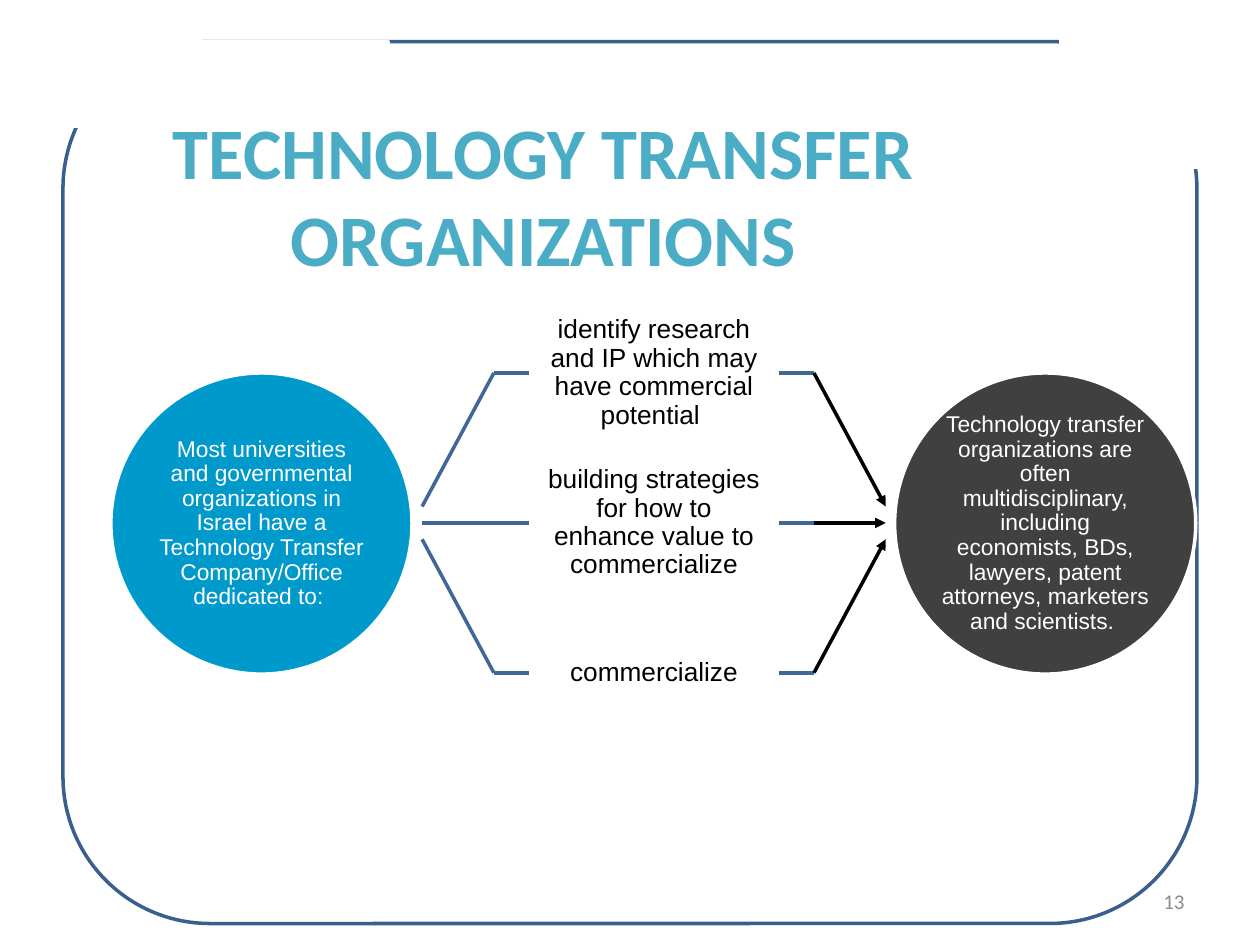
from lxml.etree import SubElement
from pptx import Presentation
from pptx.dml.color import RGBColor
from pptx.enum.shapes import MSO_CONNECTOR, MSO_SHAPE
from pptx.enum.text import MSO_ANCHOR, MSO_AUTO_SIZE, PP_ALIGN
from pptx.oxml.ns import qn
from pptx.util import Inches, Pt

COLORS = {
    "white": "FFFFFF", "black": "000000", "frame": "3A5F8C", "link": "3F6797",
    "title": "4BACC6", "source": "0099CC", "team": "404040", "number": "8C8C8C",
}
LEFT, RIGHT = 1, 3  # connection sites of a rectangle


def color(name):
    return RGBColor.from_string(COLORS[name])


class SlideBuilder:
    line_width = Pt(2)

    def __init__(self, page):
        self.page = page
        self.shapes = page.shapes

    def set_text(self, shape, text, size, fill, font="Arial", align=PP_ALIGN.CENTER,
                 inset=0.0, spacing=None, bold=False):
        frame = shape.text_frame
        frame.word_wrap = True
        frame.auto_size = MSO_AUTO_SIZE.NONE
        frame.vertical_anchor = MSO_ANCHOR.MIDDLE
        frame.margin_left = frame.margin_right = Inches(inset)
        frame.margin_top = frame.margin_bottom = Inches(inset)
        para = frame.paragraphs[0]
        para.alignment = align
        if spacing:
            para.line_spacing = spacing
        span = para.add_run()
        span.text = text
        span.font.name = font
        span.font.size = Pt(size)
        span.font.bold = bold
        span.font.color.rgb = color(fill)

    def title(self, text, box):
        title = self.shapes.title
        title.left, title.top, title.width, title.height = map(Inches, box)
        self.set_text(title, text, 41.4, "title", font="Calibri", inset=0.1, bold=True)
        title.element.getparent().append(title.element)  # above the frame

    def shape(self, kind, box, fill=None, line="white"):
        shape = self.shapes.add_shape(kind, *map(Inches, box))
        shape.shadow.inherit = False
        if fill:
            shape.fill.solid()
            shape.fill.fore_color.rgb = color(fill)
        else:
            shape.fill.background()
        shape.line.color.rgb = color(line)
        shape.line.width = self.line_width
        return shape

    def circle(self, text, box, fill):
        circle = self.shape(MSO_SHAPE.OVAL, box, fill)
        self.set_text(circle, text, 13, "white", spacing=0.9)

    def text(self, text, box, size, fill, **style):
        label = self.shapes.add_textbox(*map(Inches, box))
        self.set_text(label, text, size, fill, **style)
        return label

    def line(self, start, end, fill="link", arrow=False):
        line = self.shapes.add_connector(
            MSO_CONNECTOR.STRAIGHT, *map(Inches, start + end))
        line.line.color.rgb = color(fill)
        line.line.width = self.line_width
        properties = line.element.spPr
        if arrow:
            SubElement(properties.find(qn("a:ln")), qn("a:tailEnd"), type="triangle")
        SubElement(properties, qn("a:effectLst"))
        return line


def main():
    deck = Presentation()
    deck.slide_width, deck.slide_height = Inches(10), Inches(7.5)
    page = deck.slides.add_slide(deck.slide_layouts[5])
    slide = SlideBuilder(page)

    # Rounded frame, with two white patches that open its top corners
    slide.shape(MSO_SHAPE.ROUNDED_RECTANGLE, (0.5, 0.33, 9, 7), line="frame")
    for patch in ((0.5, 0.33, 2.58, 0.67), (8.42, 0.08, 1.33, 1.25)):
        slide.shape(MSO_SHAPE.RECTANGLE, patch, "white")

    # Slide number and title
    slide.text("13", (7.17, 6.95, 2.33, 0.4), 12, "number", font="Calibri",
               align=PP_ALIGN.RIGHT, inset=0.1)
    slide.title("TECHNOLOGY TRANSFER ORGANIZATIONS", (0, 0.71, 8.62, 1.66))

    # Circles at both ends
    top, size = 2.96, 2.39
    slide.circle("Most universities and governmental organizations in Israel have a "
                 "Technology Transfer Company/Office dedicated to: ",
                 (0.88, top, size, size), "source")
    slide.circle("Technology transfer organizations are often multidisciplinary, "
                 "including economists, BDs, lawyers, patent attorneys, marketers "
                 "and scientists. ", (7.1, top, size, size), "team")

    # Tasks, each tied to the left circle and pointing to the right one
    tasks = ("identify research and IP which may have commercial potential ",
             "building strategies for how to enhance value to commercialize",
             "commercialize")
    left, width, height = 4.2, 1.98, 1.19
    right = left + width
    stub, reach = 0.28, 0.57
    center = 4.15
    for step, task in enumerate(tasks, start=-1):
        middle = center + step * height
        near = center + step * 0.13  # height at the circles
        fork, merge = left - stub, right + stub
        label = slide.text(task, (left, middle - height / 2, width, height), 15,
                           "black", inset=0.12, spacing=0.9)
        slide.line((fork - reach, near), (fork, middle))
        slide.line((fork, middle), (left, middle)).end_connect(label, LEFT)
        slide.line((right, middle), (merge, middle)).begin_connect(label, RIGHT)
        slide.line((merge, middle), (merge + reach, near), "black", arrow=True)

    deck.save("out.pptx")


if __name__ == "__main__":
    main()
